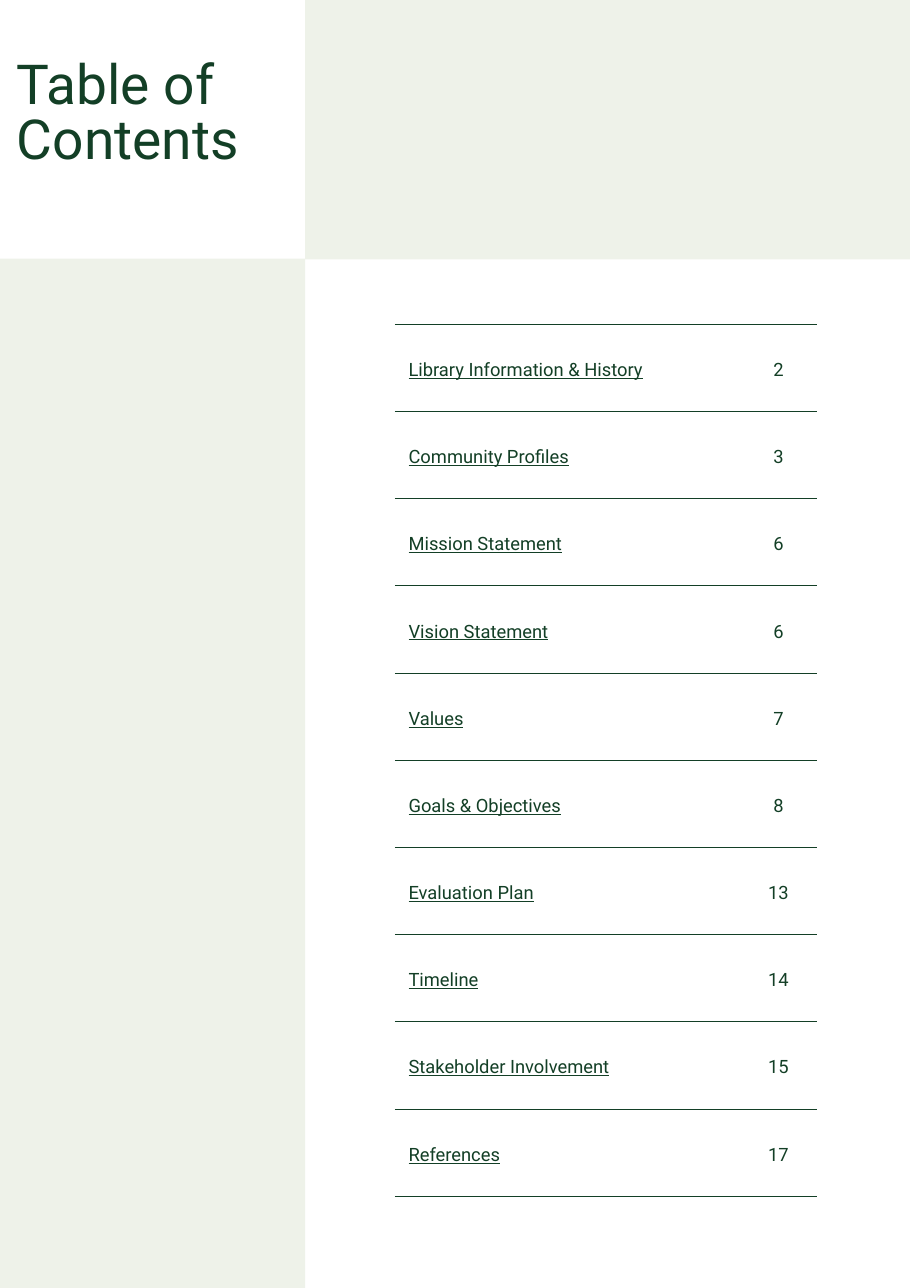
from lxml import etree
from pptx import Presentation
from pptx.dml.color import RGBColor
from pptx.enum.shapes import MSO_SHAPE
from pptx.enum.text import MSO_ANCHOR, MSO_AUTO_SIZE, PP_ALIGN
from pptx.oxml.ns import qn
from pptx.util import Pt

COLORS = {"green": "133F26", "sage": "EEF2E9"}
FONT = "Roboto"
ROW_HEIGHT = 57
COLUMN_WIDTHS = (225.5, 50.5)
PANELS = [  # left, top, width, height
    (-18, 169, 217.5, 692),
    (199.5, -18.5, 417.5, 188),
]
CONTENTS = [
    ("Library Information & History", 2),
    ("Community Profiles", 3),
    ("Mission Statement", 6),
    ("Vision Statement", 6),
    ("Values", 7),
    ("Goals & Objectives", 8),
    ("Evaluation Plan", 13),
    ("Timeline", 14),
    ("Stakeholder Involvement", 15),
    ("References", 17),
]


def write_text(text_frame, text, size, spacing, align=PP_ALIGN.LEFT, underline=False):
    paragraph = text_frame.paragraphs[0]
    paragraph.alignment = align
    paragraph.line_spacing = Pt(spacing)
    run = paragraph.add_run()
    run.text = text
    run.font.name = FONT
    run.font.size = Pt(size)
    run.font.underline = underline
    run.font.color.rgb = RGBColor.from_string(COLORS["green"])


def rule_cell(cell):
    """Draw green lines above and below the cell and none at its sides."""
    properties = cell._tc.get_or_add_tcPr()
    for index, side in enumerate(("lnL", "lnR", "lnT", "lnB")):
        line = etree.Element(qn(f"a:{side}"))
        if side in ("lnT", "lnB"):
            line.set("w", str(Pt(0.75)))
            fill = etree.SubElement(line, qn("a:solidFill"))
            etree.SubElement(fill, qn("a:srgbClr"), val=COLORS["green"])
        else:
            etree.SubElement(line, qn("a:noFill"))
        properties.insert(index, line)


presentation = Presentation()
presentation.slide_width = Pt(594.72)
presentation.slide_height = Pt(841.68)
slide = presentation.slides.add_slide(presentation.slide_layouts[5])

for bounds in PANELS:
    panel = slide.shapes.add_shape(MSO_SHAPE.RECTANGLE, *map(Pt, bounds))
    panel.shadow.inherit = False
    panel.fill.solid()
    panel.fill.fore_color.rgb = RGBColor.from_string(COLORS["sage"])
    panel.line.fill.background()

table = slide.shapes.add_table(
    len(CONTENTS), len(COLUMN_WIDTHS), Pt(258), Pt(212),
    Pt(sum(COLUMN_WIDTHS)), Pt(ROW_HEIGHT * len(CONTENTS)),
).table
table.first_row = False
table.horz_banding = False
for column, width in zip(table.columns, COLUMN_WIDTHS):
    column.width = Pt(width)

for row, (section, page) in zip(table.rows, CONTENTS):
    row.height = Pt(ROW_HEIGHT)
    section_cell, page_cell = row.cells
    for cell in (section_cell, page_cell):
        cell.fill.background()
        cell.vertical_anchor = MSO_ANCHOR.MIDDLE
        cell.margin_left = cell.margin_right = Pt(9)
        cell.margin_top = cell.margin_bottom = Pt(9)
        rule_cell(cell)
    write_text(section_cell.text_frame, section, size=12, spacing=16.8, underline=True)
    write_text(page_cell.text_frame, str(page), size=12, spacing=16.8, align=PP_ALIGN.CENTER)

title = slide.shapes.title
title.left, title.top, title.width, title.height = map(Pt, (11, 39.5, 276.5, 75.5))
frame = title.text_frame
frame.word_wrap = True
frame.auto_size = MSO_AUTO_SIZE.NONE
frame.vertical_anchor = MSO_ANCHOR.TOP
frame.margin_left = frame.margin_right = frame.margin_top = frame.margin_bottom = 0
write_text(frame, "Table of Contents", size=36, spacing=36)
# The title belongs in front of the panels and the table.
slide.shapes._spTree.append(title._element)

presentation.save("out.pptx")
